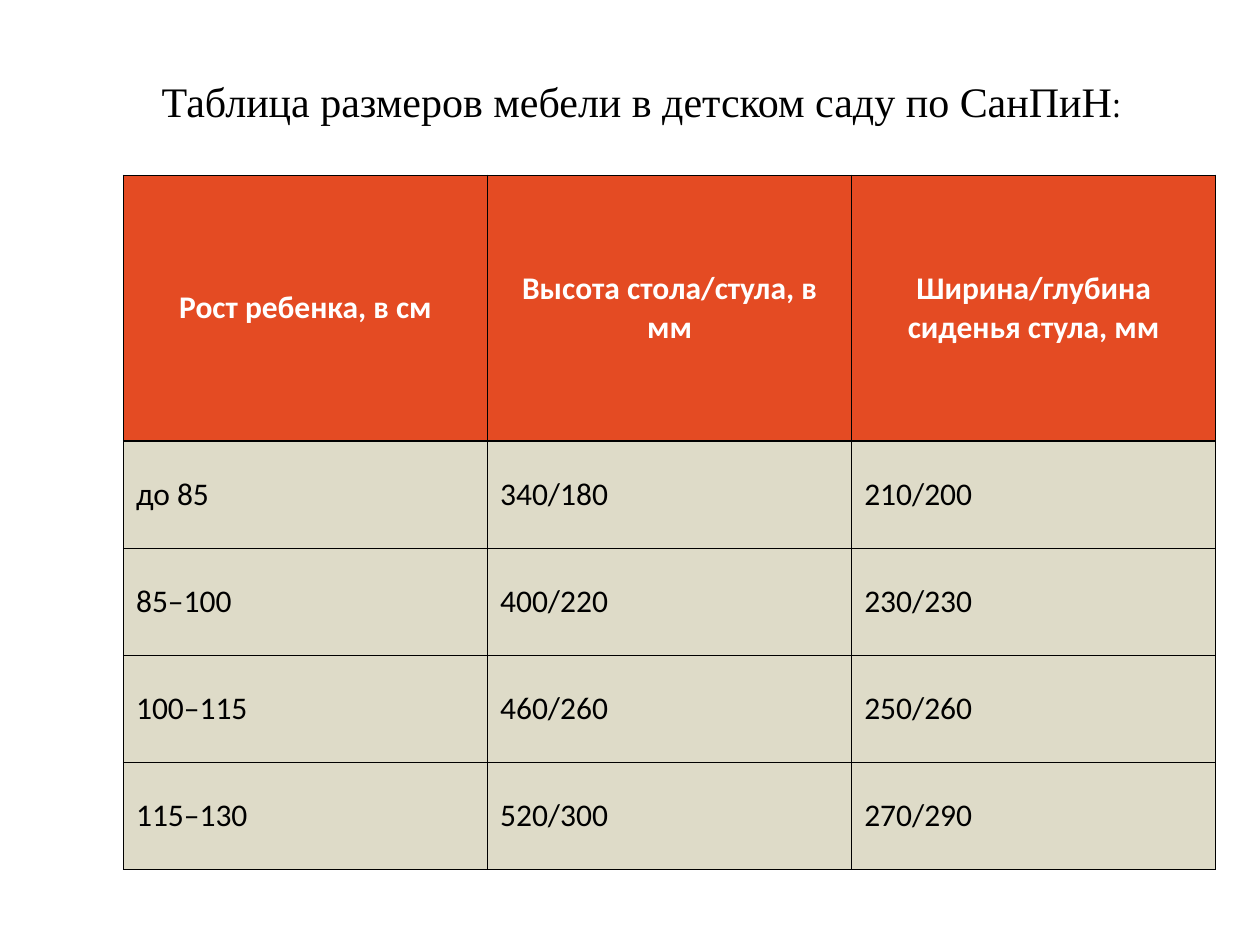
"""Build a slide with a table of kindergarten furniture sizes."""
from dataclasses import dataclass

from lxml.etree import SubElement
from pptx import Presentation
from pptx.dml.color import RGBColor
from pptx.enum.text import MSO_ANCHOR as Anchor, MSO_AUTO_SIZE as AutoSize, PP_ALIGN as Align
from pptx.oxml.ns import qn
from pptx.util import Inches, Pt


@dataclass(frozen=True)
class Theme:
    header_fill: str = "E44B23"
    body_fill: str = "DEDBC8"
    light: str = "FFFFFF"
    dark: str = "000000"
    title_font: str = "Times New Roman"
    colon_font: str = "Open Sans"
    table_font: str = "Calibri"
    title_size: int = 24
    text_size: int = 18
    border_width: float = 0.75


theme = Theme()


def write_text(paragraph, text, *, font, size, color, bold=False, align=Align.LEFT):
    paragraph.alignment = align
    run = paragraph.add_run()
    run.text = text
    run.font.name = font
    run.font.size = Pt(size)
    run.font.bold = bold
    run.font.color.rgb = RGBColor.from_string(color)


def format_cell(cell, fill):
    properties = cell._tc.get_or_add_tcPr()
    for side in ("a:lnL", "a:lnR", "a:lnT", "a:lnB"):
        line = SubElement(properties, qn(side), w=str(Pt(theme.border_width)))
        SubElement(SubElement(line, qn("a:solidFill")), qn("a:srgbClr"), val=theme.dark)
    cell.fill.solid()
    cell.fill.fore_color.rgb = RGBColor.from_string(fill)
    cell.vertical_anchor = Anchor.MIDDLE


presentation = Presentation()
presentation.slide_width = Inches(10)
presentation.slide_height = Inches(7.5)
slide = presentation.slides.add_slide(presentation.slide_layouts[5])

title = slide.shapes.title
title.left, title.top = Inches(0.91), Inches(0.52)
title.width, title.height = Inches(8.36), Inches(0.81)
title_frame = title.text_frame
title_frame.auto_size = AutoSize.NONE
title_frame.word_wrap = False
title_frame.vertical_anchor = Anchor.MIDDLE
title_frame.margin_bottom = Inches(0.3)
title_paragraph = title_frame.paragraphs[0]
write_text(title_paragraph, "Таблица размеров мебели в детском саду по СанПиН",
           font=theme.title_font, size=theme.title_size, color=theme.dark, align=Align.CENTER)
write_text(title_paragraph, ":",
           font=theme.colon_font, size=theme.text_size, color=theme.dark, align=Align.CENTER)

furniture_sizes = [
    ("Рост ребенка, в см", "Высота стола/стула, в мм", "Ширина/глубина сиденья стула, мм"),
    ("до 85", "340/180", "210/200"),
    ("85–100", "400/220", "230/230"),
    ("100–115", "460/260", "250/260"),
    ("115–130", "520/300", "270/290"),
]
column_width = Inches(2.89)
header_height, body_height = Inches(2.11), Inches(0.85)
row_count, column_count = len(furniture_sizes), len(furniture_sizes[0])
table = slide.shapes.add_table(
    row_count, column_count, Inches(0.98), Inches(1.39),
    column_width * column_count, header_height + body_height * (row_count - 1)).table

for column in table.columns:
    column.width = column_width
for row_index, values in enumerate(furniture_sizes):
    is_header = row_index == 0
    table.rows[row_index].height = header_height if is_header else body_height
    for column_index, value in enumerate(values):
        cell = table.cell(row_index, column_index)
        format_cell(cell, theme.header_fill if is_header else theme.body_fill)
        write_text(cell.text_frame.paragraphs[0], value,
                   font=theme.table_font, size=theme.text_size, bold=is_header,
                   color=theme.light if is_header else theme.dark,
                   align=Align.CENTER if is_header else Align.LEFT)

presentation.save("out.pptx")
